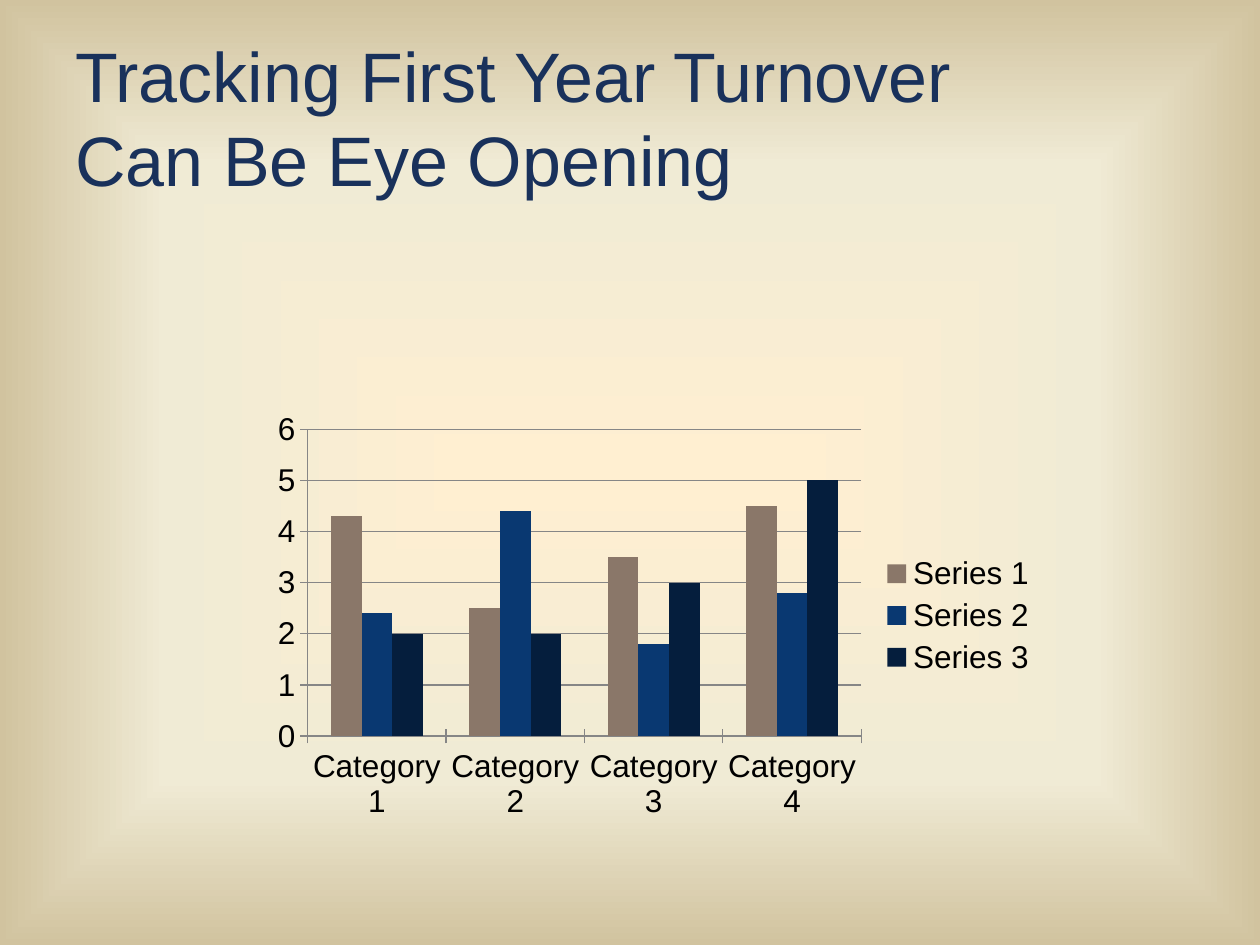
import pptx
import pptx.chart.data
import pptx.dml.color
import pptx.enum.chart
import pptx.enum.text
import pptx.oxml
import pptx.oxml.ns
import pptx.util

# Content
TITLE_LINES = ["Tracking First Year Turnover ", "Can Be Eye Opening"]
CATEGORIES = ["Category 1", "Category 2", "Category 3", "Category 4"]
SERIES = [
    ("Series 1", "taupe", (4.3, 2.5, 3.5, 4.5)),
    ("Series 2", "blue", (2.4, 4.4, 1.8, 2.8)),
    ("Series 3", "navy", (2, 2, 3, 5)),
]

# Style
FONT = "Arial"
COLORS = {
    "title": "19315B", "text": "000000", "line": "868686",
    "taupe": "8A7769", "blue": "093871", "navy": "051E3D",
}
BACKGROUND_STOPS = [(0, "FFEFD1"), (65, "F0EBD5"), (100, "D1C39F")]

# Layout: left, top, width, height as shares of the slide
WIDTH, HEIGHT = 10, 7.5
TITLE_AREA = (0.05, 0.04, 0.9, 1 / 6)
CHART_AREA = (0.208, 0.427, 0.625, 0.449)


def color(name):
    return pptx.dml.color.RGBColor.from_string(COLORS[name])


def place(area):
    scales = (WIDTH, HEIGHT, WIDTH, HEIGHT)
    return [pptx.util.Inches(round(share * scale, 2)) for share, scale in zip(area, scales)]


def style_font(font, size, name):
    font.name = FONT
    font.size = pptx.util.Pt(size)
    font.color.rgb = color(name)


def paint_background(page):
    page.background.fill.solid()
    solid = page.background._cSld.find(".//" + pptx.oxml.ns.qn("a:solidFill"))
    stops = "".join(
        f'<a:gs pos="{percent * 1000}"><a:srgbClr val="{value}"/></a:gs>'
        for percent, value in BACKGROUND_STOPS
    )
    gradient = pptx.oxml.parse_xml(
        f'<a:gradFill {pptx.oxml.ns.nsdecls("a")} rotWithShape="1"><a:gsLst>{stops}</a:gsLst>'
        '<a:path path="shape"><a:fillToRect l="50000" t="50000" r="50000" b="50000"/></a:path>'
        '</a:gradFill>'
    )
    solid.getparent().replace(solid, gradient)


def add_title(page):
    frame = page.shapes.add_textbox(*place(TITLE_AREA)).text_frame
    frame.word_wrap = True
    frame.vertical_anchor = pptx.enum.text.MSO_ANCHOR.MIDDLE
    para = frame.paragraphs[0]
    for index, line in enumerate(TITLE_LINES):
        if index:
            para.add_line_break()
        span = para.add_run()
        span.text = line
        style_font(span.font, 40, "title")


def add_turnover_chart(page):
    data = pptx.chart.data.CategoryChartData()
    data.categories = CATEGORIES
    for name, _, values in SERIES:
        data.add_series(name, values)
    kind = pptx.enum.chart.XL_CHART_TYPE.COLUMN_CLUSTERED
    chart = page.shapes.add_chart(kind, *place(CHART_AREA), data).chart
    style_font(chart.font, 18, "text")
    chart.has_title = False

    # Columns
    plot = chart.plots[0]
    plot.vary_by_categories = False
    plot.gap_width = 150
    for series, (_, fill_name, _) in zip(plot.series, SERIES):
        series.format.fill.solid()
        series.format.fill.fore_color.rgb = color(fill_name)

    # Axes and gridlines
    chart.value_axis.has_major_gridlines = True
    for axis in (chart.category_axis, chart.value_axis):
        axis.major_tick_mark = pptx.enum.chart.XL_TICK_MARK.CROSS
        axis.format.line.color.rgb = color("line")
    chart.value_axis.major_gridlines.format.line.color.rgb = color("line")

    # Legend
    chart.has_legend = True
    chart.legend.position = pptx.enum.chart.XL_LEGEND_POSITION.RIGHT
    chart.legend.include_in_layout = False


def main():
    deck = pptx.Presentation()
    deck.slide_width = pptx.util.Inches(WIDTH)
    deck.slide_height = pptx.util.Inches(HEIGHT)
    page = deck.slides.add_slide(deck.slide_layouts[6])
    paint_background(page)
    add_title(page)
    add_turnover_chart(page)
    deck.save("out.pptx")


if __name__ == "__main__":
    main()
